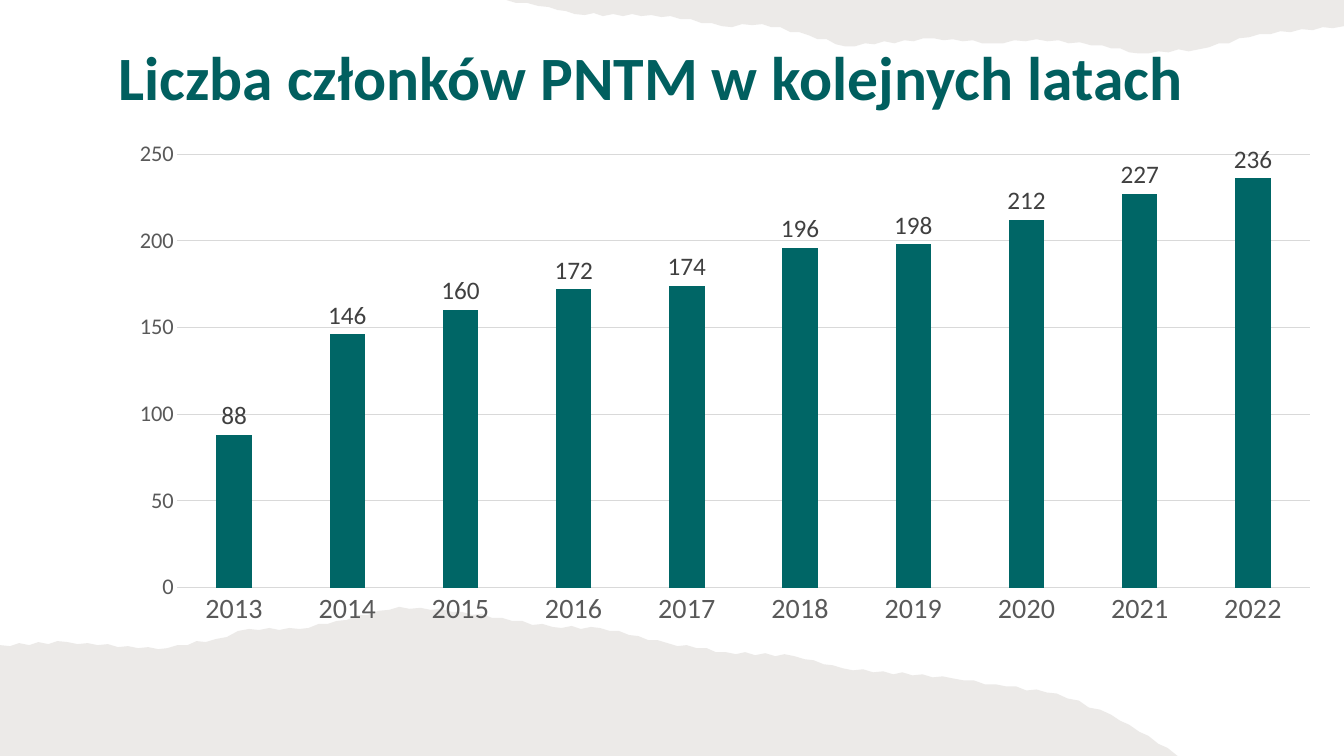
import itertools

import pptx
import pptx.chart.data
import pptx.dml.color
import pptx.enum.chart
import pptx.enum.text
import pptx.oxml
import pptx.oxml.ns
import pptx.util

PX = 9144  # 100 px to the inch
SLIDE_WIDTH, SLIDE_HEIGHT = 1333, 750
FONT = "Calibri"
RGB = pptx.dml.color.RGBColor
TITLE_GREEN = RGB(0x01, 0x5F, 0x5F)
BAR_GREEN = RGB(0x00, 0x66, 0x66)
PAPER = RGB(0x82, 0x76, 0x6A)
PAPER_OPACITY = 15
GRID_GRAY = RGB(0xD9, 0xD9, 0xD9)
AXIS_GRAY = RGB(0x59, 0x59, 0x59)
LABEL_GRAY = RGB(0x40, 0x40, 0x40)

# Boxes are left, top, width, height
TITLE_BOX = (77, 41, 1138, 77)
CHART_BOX = (114, 129, 1208, 503)
PLOT_BOX = (176, 153, 1123, 430)
TOP_PAPER_BOX = (502, 0, 831, 53)
BOTTOM_PAPER_BOX = (0, 602, 1168, 148)

MEMBERS = {2013: 88, 2014: 146, 2015: 160, 2016: 172, 2017: 174,
           2018: 196, 2019: 198, 2020: 212, 2021: 227, 2022: 236}

# Bends of each torn edge from left to right, x: y within the paper's box
TOP_BENDS = {0: 0, 42: 7, 68: 14, 163: 16, 214: 26, 254: 24, 300: 35, 336: 46,
             424: 38, 482: 43, 526: 39, 591: 45, 627: 53, 687: 49, 747: 34, 831: 26}
BOTTOM_BENDS = {0: 38, 67: 35, 157: 42, 214: 32, 247: 22, 297: 22, 334: 14,
                396: 0, 458: 5, 548: 20, 595: 21, 662: 36, 720: 45, 788: 49,
                836: 61, 945: 71, 988: 77, 1048: 86, 1102: 107, 1139: 128, 1168: 148}
TEAR_STEP = 10
TEAR_DEPTH = 1


def emu(*lengths):
    return [pptx.util.Emu(length * PX) for length in lengths]


def set_font(font, size, color, bold=None):
    font.name, font.size, font.bold = FONT, pptx.util.Pt(size), bold
    font.color.rgb = color


def set_line(line, color):
    line.color.rgb, line.width = color, pptx.util.Pt(0.75)


def add_title(page, box, text):
    title = page.shapes.title
    title.left, title.top, title.width, title.height = emu(*box)
    frame = title.text_frame
    frame.text = text
    frame.auto_size = pptx.enum.text.MSO_AUTO_SIZE.NONE
    frame.vertical_anchor = pptx.enum.text.MSO_ANCHOR.BOTTOM
    para = frame.paragraphs[0]
    para.alignment = pptx.enum.text.PP_ALIGN.CENTER
    para.line_spacing = 0.9
    set_font(para.runs[0].font, 44, TITLE_GREEN, True)


def tear(bends):
    """Join the bends by a ragged line: small steps, alternately down and up."""
    points = []
    for (x1, y1), (x2, y2) in itertools.pairwise(bends.items()):
        steps = max(1, round((x2 - x1) / TEAR_STEP))
        points.append((x1, y1))
        for step in range(1, steps):
            part = step / steps
            ragged = TEAR_DEPTH if step % 2 else -TEAR_DEPTH
            points.append((round(x1 + part * (x2 - x1)),
                           round(y1 + part * (y2 - y1)) + ragged))
    return points + [(x2, y2)]


def add_torn_paper(page, box, bends, corner):
    """Fill the area between the torn edge and a corner of the slide."""
    left, top = box[:2]
    points = [(left + x, top + y) for x, y in tear(bends)] + [corner]
    builder = page.shapes.build_freeform(*points[0], scale=PX)
    builder.add_line_segments(points[1:])
    paper = builder.convert_to_shape()
    paper.shadow.inherit = False
    paper.line.fill.background()
    paper.fill.solid()
    paper.fill.fore_color.rgb = PAPER
    color = paper.fill._xPr.find(".//" + pptx.oxml.ns.qn("a:srgbClr"))
    alpha = color.makeelement(pptx.oxml.ns.qn("a:alpha"), {"val": str(PAPER_OPACITY * 1000)})
    color.append(alpha)


def fix_plot_area(chart, chart_box, plot_box):
    """Place the inner plot area, which the file stores as fractions of the chart."""
    left, top, width, height = chart_box
    plot_left, plot_top, plot_width, plot_height = plot_box
    fractions = {"x": (plot_left - left) / width, "y": (plot_top - top) / height,
                 "w": plot_width / width, "h": plot_height / height}
    plot_area = chart._chartSpace.chart.plotArea
    for old in plot_area.findall(pptx.oxml.ns.qn("c:layout")):
        plot_area.remove(old)
    modes = "".join(f'<c:{side}Mode val="edge"/>' for side in "xy")
    sizes = "".join(f'<c:{side} val="{value:.4f}"/>' for side, value in fractions.items())
    plot_area.insert(0, pptx.oxml.parse_xml(
        f'<c:layout {pptx.oxml.ns.nsdecls("c")}><c:manualLayout>'
        f'<c:layoutTarget val="inner"/>{modes}{sizes}</c:manualLayout></c:layout>'))


def style_axes(chart):
    for axis, size in ((chart.category_axis, 20), (chart.value_axis, 16)):
        axis.major_tick_mark = axis.minor_tick_mark = pptx.enum.chart.XL_TICK_MARK.NONE
        set_font(axis.tick_labels.font, size, AXIS_GRAY)
    set_line(chart.category_axis.format.line, GRID_GRAY)
    values = chart.value_axis
    values.minimum_scale, values.maximum_scale, values.major_unit = 0, 250, 50
    values.format.line.fill.background()
    set_line(values.major_gridlines.format.line, GRID_GRAY)


def style_bars(plot):
    plot.gap_width = 219
    plot.vary_by_categories = False
    bars = plot.series[0]
    bars.format.fill.solid()
    bars.format.fill.fore_color.rgb = BAR_GREEN
    labels = bars.data_labels
    labels.show_value = True
    labels.position = pptx.enum.chart.XL_LABEL_POSITION.OUTSIDE_END
    set_font(labels.font, 18, LABEL_GRAY)


def add_member_chart(page, box, plot_box):
    data = pptx.chart.data.CategoryChartData()
    data.categories = [str(year) for year in MEMBERS]
    data.add_series("Liczba członków", MEMBERS.values())
    chart = page.shapes.add_chart(
        pptx.enum.chart.XL_CHART_TYPE.COLUMN_CLUSTERED, *emu(*box), data).chart
    chart.has_title = chart.has_legend = False
    chart.font.name, chart.font.size = FONT, pptx.util.Pt(10)
    fix_plot_area(chart, box, plot_box)
    style_axes(chart)
    style_bars(chart.plots[0])


def main():
    deck = pptx.Presentation()
    deck.slide_width, deck.slide_height = emu(SLIDE_WIDTH, SLIDE_HEIGHT)
    page = deck.slides.add_slide(deck.slide_layouts[5])
    add_title(page, TITLE_BOX, "Liczba członków PNTM w kolejnych latach")
    add_torn_paper(page, TOP_PAPER_BOX, TOP_BENDS, corner=(SLIDE_WIDTH, 0))
    add_torn_paper(page, BOTTOM_PAPER_BOX, BOTTOM_BENDS, corner=(0, SLIDE_HEIGHT))
    add_member_chart(page, CHART_BOX, PLOT_BOX)
    deck.save("out.pptx")


if __name__ == "__main__":
    main()
